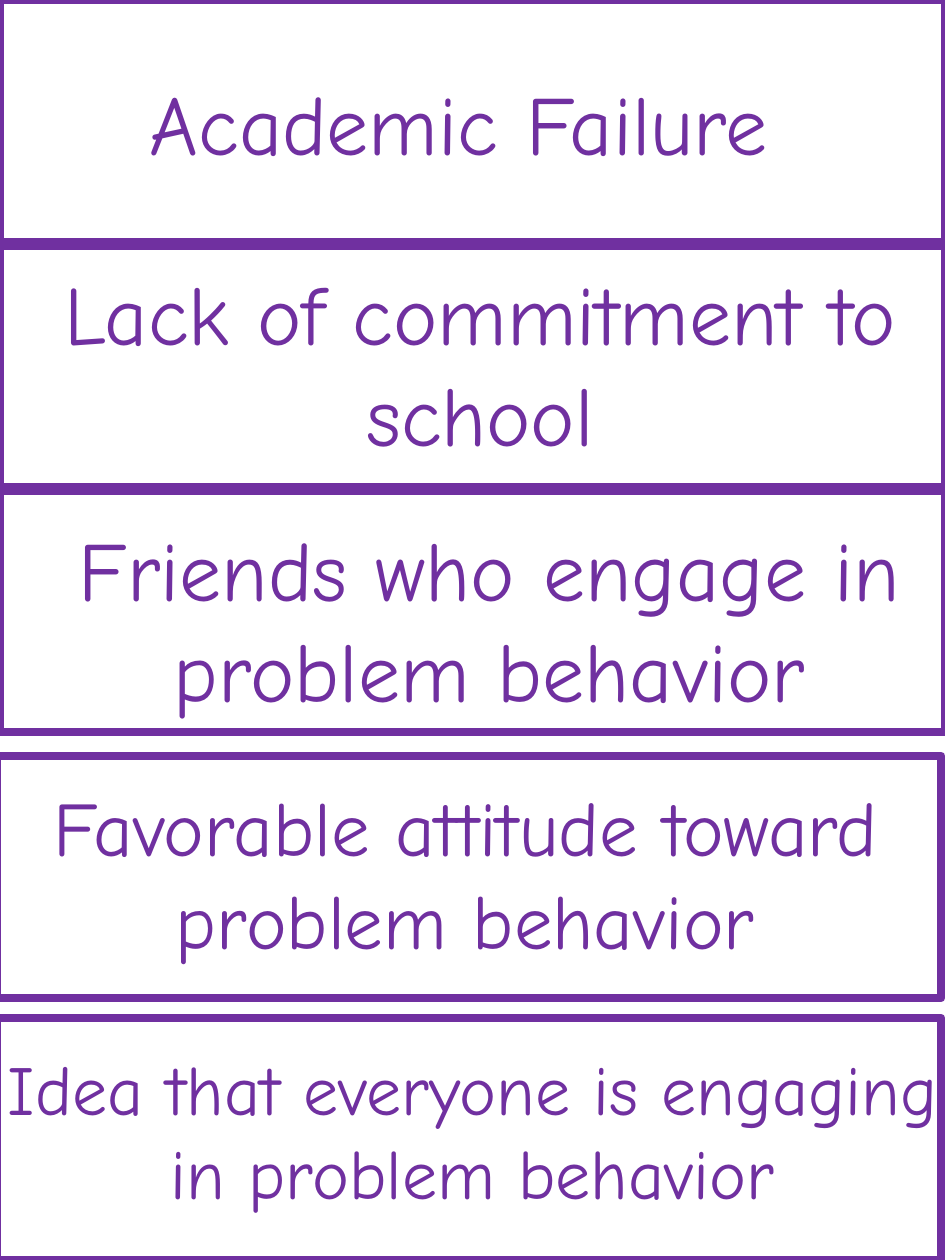
from pptx import Presentation
from pptx.dml.color import RGBColor
from pptx.enum.shapes import MSO_SHAPE
from pptx.enum.text import MSO_AUTO_SIZE, PP_ALIGN
from pptx.util import Inches, Pt

RECT = MSO_SHAPE.RECTANGLE
GROW = MSO_AUTO_SIZE.SHAPE_TO_FIT_TEXT
LEFT, CENTER = PP_ALIGN.LEFT, PP_ALIGN.CENTER

COLORS = {"purple": "7030A0"}
FONT = "Comic Neue"
WIDTH, HEIGHT = 7.5, 10
CARD_H = 1.92

# Left and top of each card
CARDS = [(0, 0), (0, 1.95), (0, 3.89), (-0.03, 6), (-0.03, 8.08)]


def color(name):
    return RGBColor.from_string(COLORS[name])


def add_card(slide, left, top):
    card = slide.shapes.add_shape(
        RECT, Inches(left), Inches(top), Inches(WIDTH), Inches(CARD_H))
    card.shadow.inherit = False
    card.fill.background()
    card.line.color.rgb = color("purple")
    card.line.width = Pt(5)


def add_label(slide, text, box, size=48, align=CENTER, wrap=True):
    label = slide.shapes.add_textbox(*(Inches(n) for n in box))
    frame = label.text_frame
    frame.word_wrap = wrap
    frame.auto_size = GROW
    para = frame.paragraphs[0]
    para.alignment = align
    run = para.add_run()
    run.text = text
    run.font.name = FONT
    run.font.size = Pt(size)
    run.font.color.rgb = color("purple")


def main():
    deck = Presentation()
    deck.slide_width, deck.slide_height = Inches(WIDTH), Inches(HEIGHT)
    slide = deck.slides.add_slide(deck.slide_layouts[6])

    # Card frames
    for left, top in CARDS:
        add_card(slide, left, top)

    # Risk factors, from top to bottom
    add_label(slide, "Academic Failure", (1.09, 0.52, 5.58, 0.91),
              align=LEFT, wrap=False)
    add_label(slide, "Lack of commitment to school",
              (0.15, 2.03, 7.32, 1.72))
    add_label(slide, "Friends who engage in problem behavior",
              (0.15, 4.06, 7.47, 1.72))
    add_label(slide, "Favorable attitude toward problem behavior",
              (-0.04, 6.14, 7.47, 1.58), size=44)
    add_label(slide, "Idea that everyone is engaging in problem behavior",
              (-0.16, 8.25, 7.82, 1.45), size=40)

    deck.save("out.pptx")


if __name__ == "__main__":
    main()
